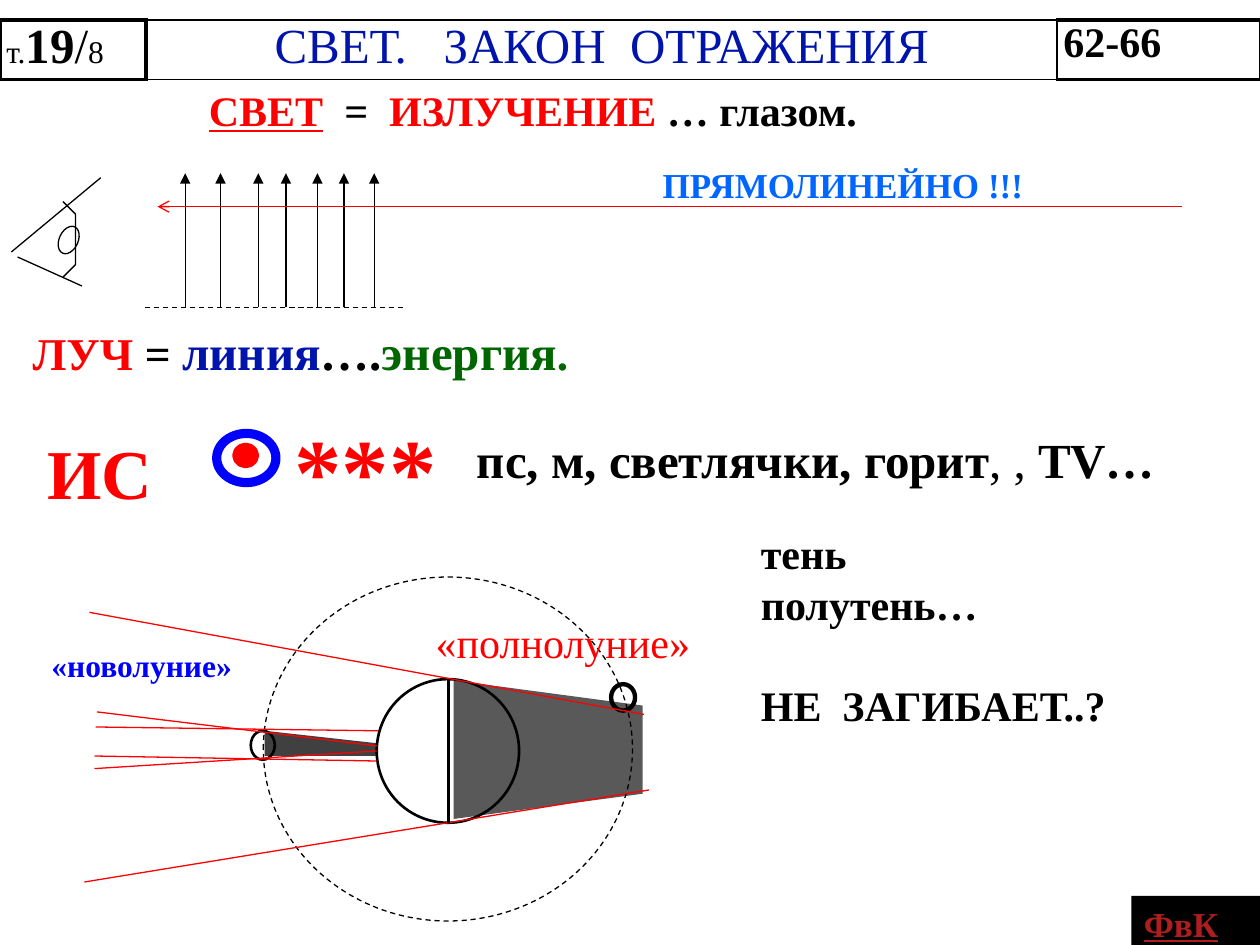
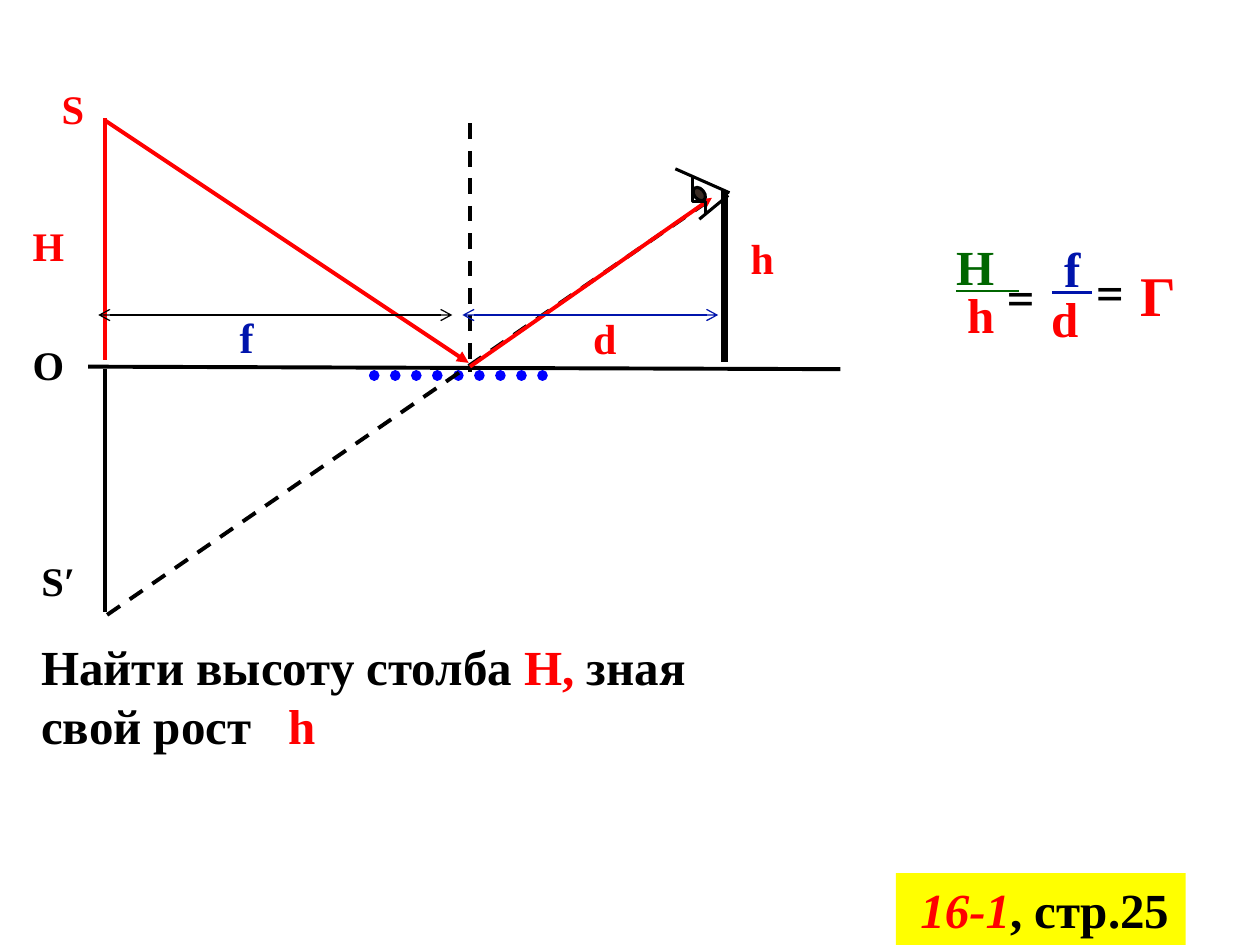
from dataclasses import dataclass
from typing import Optional

from lxml.etree import SubElement
from pptx import Presentation
from pptx.dml.color import RGBColor
from pptx.enum.dml import MSO_LINE
from pptx.enum.shapes import MSO_CONNECTOR, MSO_SHAPE
from pptx.enum.text import MSO_ANCHOR, MSO_AUTO_SIZE, PP_ALIGN
from pptx.oxml import parse_xml
from pptx.oxml.ns import nsdecls, qn
from pptx.util import Inches, Pt

# Slide grid: 100 columns by 75 rows of square units
WIDTH, HEIGHT = Inches(10), Inches(7.5)
UNIT = WIDTH / 100

BLACK = RGBColor(0x00, 0x00, 0x00)
RED = RGBColor(0xFF, 0x00, 0x00)
BLUE = RGBColor(0x00, 0x00, 0xFF)
NAVY = RGBColor(0x00, 0x14, 0xAC)
SKY = RGBColor(0x00, 0x66, 0xFF)
GREEN = RGBColor(0x00, 0x66, 0x00)
YELLOW = RGBColor(0xFF, 0xFF, 0x00)
BRICK = RGBColor(0xAD, 0x1F, 0x1F)
BROWN = RGBColor(0x3B, 0x2C, 0x24)
UMBRA = RGBColor(0x59, 0x59, 0x59)
MOON_SHADOW = RGBColor(0x40, 0x40, 0x40)
SERIF = "Times New Roman"

Point = tuple[float, float]
Box = tuple[float, float, float, float]


@dataclass(frozen=True)
class Run:
    text: str
    size: float
    color: RGBColor = BLACK
    bold: bool = True
    italic: bool = False
    underline: bool = False
    font: str = SERIF
    raised: bool = False


@dataclass(frozen=True)
class Stroke:
    color: RGBColor = BLACK
    width: float = 0.75
    dash: Optional[MSO_LINE] = None
    head: str = ""
    tail: str = ""
    round_cap: bool = False


@dataclass(frozen=True)
class Ray:
    start: Point
    end: Point
    stroke: Stroke = Stroke()


@dataclass(frozen=True)
class Oval:
    box: Box
    stroke: Stroke = Stroke()
    fill: Optional[RGBColor] = None
    turn: float = 0


@dataclass(frozen=True)
class Label:
    box: Box
    paragraphs: list[list[Run]]
    wrap: bool = True
    grow: bool = True
    fill: Optional[RGBColor] = None
    anchor: MSO_ANCHOR = MSO_ANCHOR.TOP
    last_gap: float = 0


@dataclass(frozen=True)
class Eye:
    cornea: tuple[Point, Point, Point, Point]
    lids: tuple[Ray, Ray]
    pupil: Oval


def grid(*units: float) -> list[int]:
    return [round(unit * UNIT) for unit in units]


def apply_stroke(line, stroke: Stroke) -> None:
    line.color.rgb = stroke.color
    line.width = Pt(stroke.width)
    if stroke.dash is not None:
        line.dash_style = stroke.dash


def apply_fill(fill, color: Optional[RGBColor]) -> None:
    if color is None:
        fill.background()
    else:
        fill.solid()
        fill.fore_color.rgb = color


def draw_ray(slide, ray: Ray) -> None:
    connector = slide.shapes.add_connector(MSO_CONNECTOR.STRAIGHT, *grid(*ray.start, *ray.end))
    apply_stroke(connector.line, ray.stroke)
    properties = connector._element.spPr
    outline = properties.find(qn("a:ln"))
    if ray.stroke.round_cap:
        outline.set("cap", "rnd")
    for tag, arrow in (("a:headEnd", ray.stroke.head), ("a:tailEnd", ray.stroke.tail)):
        if arrow:
            SubElement(outline, qn(tag)).set("type", arrow)
    SubElement(properties, qn("a:effectLst"))


def draw_oval(slide, oval: Oval) -> None:
    shape = slide.shapes.add_shape(MSO_SHAPE.OVAL, *grid(*oval.box))
    shape.shadow.inherit = False
    shape.rotation = oval.turn
    apply_fill(shape.fill, oval.fill)
    apply_stroke(shape.line, oval.stroke)


def draw_outline(slide, points: list[Point], fill: Optional[RGBColor] = None,
                 stroke: Optional[Stroke] = None) -> None:
    builder = slide.shapes.build_freeform(*points[0], scale=UNIT)
    builder.add_line_segments(points[1:], close=fill is not None)
    shape = builder.convert_to_shape()
    shape.shadow.inherit = False
    apply_fill(shape.fill, fill)
    if stroke:
        apply_stroke(shape.line, stroke)
    else:
        shape.line.fill.background()


def bezier(a: Point, b: Point, c: Point, d: Point, steps: int = 16) -> list[Point]:
    def at(t: float, axis: int) -> float:
        s = 1 - t
        return s**3 * a[axis] + 3 * s * s * t * b[axis] + 3 * s * t * t * c[axis] + t**3 * d[axis]
    return [(at(i / steps, 0), at(i / steps, 1)) for i in range(steps + 1)]


def draw_eye(slide, eye: Eye) -> None:
    draw_outline(slide, bezier(*eye.cornea), stroke=eye.pupil.stroke)
    for lid in eye.lids:
        draw_ray(slide, lid)
    draw_oval(slide, eye.pupil)


def write_runs(paragraph, runs: list[Run]) -> None:
    for item in runs:
        run = paragraph.add_run()
        run.text = item.text
        font = run.font
        font.name, font.size = item.font, Pt(item.size)
        font.bold, font.italic, font.underline = item.bold, item.italic, item.underline
        font.color.rgb = item.color
        if item.raised:
            run._r.get_or_add_rPr().set("baseline", "30000")


def draw_label(slide, label: Label) -> None:
    if label.fill is None:
        shape = slide.shapes.add_textbox(*grid(*label.box))
    else:
        shape = slide.shapes.add_shape(MSO_SHAPE.RECTANGLE, *grid(*label.box))
        shape.shadow.inherit = False
        shape.line.fill.background()
        apply_fill(shape.fill, label.fill)
    frame = shape.text_frame
    frame.word_wrap = label.wrap
    frame.auto_size = MSO_AUTO_SIZE.SHAPE_TO_FIT_TEXT if label.grow else MSO_AUTO_SIZE.NONE
    frame.vertical_anchor = label.anchor
    for index, runs in enumerate(label.paragraphs):
        paragraph = frame.add_paragraph() if index else frame.paragraphs[0]
        paragraph.alignment = PP_ALIGN.LEFT
        write_runs(paragraph, runs)
    if label.last_gap:
        paragraph.space_before = Pt(label.last_gap)


def draw_header(slide) -> None:
    thick, thin = 2.25, 1
    # Each cell: width, runs, alignment, borders left, right, top, bottom
    cells = [
        (11.6, [Run("т.", 18, bold=False), Run("19", 28), Run("/", 28, bold=False),
                Run("8", 18, bold=False)], PP_ALIGN.LEFT, (thick, thick, thick, thick)),
        (72.3, [Run("СВЕТ.   ЗАКОН  ОТРАЖЕНИЯ", 28, NAVY, bold=False)],
         PP_ALIGN.CENTER, (thick, thin, thin, thin)),
        (16.2, [Run("62-66", 24)], PP_ALIGN.LEFT, (thin, thick, thick, thick)),
    ]
    table = slide.shapes.add_table(1, len(cells), *grid(0, 1.6, 100, 4.7)).table
    table.first_row = table.horz_banding = False
    for index, (width, runs, alignment, borders) in enumerate(cells):
        table.columns[index].width = grid(width)[0]
        cell = table.cell(0, index)
        cell.margin_left = cell.margin_right = Inches(0.05)
        cell.margin_top = cell.margin_bottom = 0
        cell.fill.background()
        cell.text_frame.paragraphs[0].alignment = alignment
        write_runs(cell.text_frame.paragraphs[0], runs)
        properties = cell._tc.get_or_add_tcPr()
        for place, (side, points) in enumerate(zip("LRTB", borders)):
            properties.insert(place, parse_xml(
                f'<a:ln{side} {nsdecls("a")} w="{Pt(points)}"><a:solidFill>'
                f'<a:srgbClr val="{BLACK}"/></a:solidFill></a:ln{side}>'))


def build_light_slide(slide) -> None:
    hair, red = Stroke(), Stroke(RED)
    dashed = Stroke(dash=MSO_LINE.DASH)
    # Moon's shadow lies under everything
    draw_outline(slide, [(20.9, 59.9), (30, 59.7), (30, 59.2), (21, 58.1)], MOON_SHADOW)
    draw_header(slide)

    # Eye, upward rays and the straight ray
    draw_eye(slide, Eye(((5.4, 16.4), (6.5, 16.9), (6.4, 19.5), (5.1, 22.2)),
                        (Ray((1.4, 20.4), (6.5, 22.7)), Ray((0.9, 20), (8, 14.1))),
                        Oval((4.7, 17.9, 1.5, 2.3), hair, turn=24.8)))
    for column in (14.7, 17.5, 20.5, 22.7, 25.2, 27.3, 29.7):
        draw_ray(slide, Ray((column, 24.4), (column, 13.75), Stroke(tail="triangle")))
    draw_ray(slide, Ray((11.5, 24.4), (32, 24.4), dashed))
    draw_ray(slide, Ray((93.8, 16.4), (12.5, 16.4), Stroke(RED, tail="arrow")))

    # Light source sign
    draw_oval(slide, Oval((17.2, 34.4, 4.7, 3.9), Stroke(BLUE, 5.25)))
    draw_oval(slide, Oval((18.8, 35.5, 1.4, 1.3), Stroke(RED, 5.25), RED))

    # Earth, its shadow, the Moon and its orbit
    draw_outline(slide, [(35.7, 65.3), (50.8, 62.9), (50.8, 56.3), (35.7, 53.9)], UMBRA)
    for box, stroke in (((29.9, 53.9, 11.3, 11.4), Stroke(width=1.5)),
                        ((19.9, 58, 1.9, 2.3), Stroke(width=1.5)),
                        ((20.9, 45.8, 29.3, 27.3), dashed),
                        ((48.5, 54.3, 1.9, 2.1), Stroke(width=2.5))):
        draw_oval(slide, Oval(box, stroke))
    for start, end in (((7.1, 48.6), (51.1, 56.7)), ((6.7, 70), (51.5, 62.7)),
                       ((7.7, 56.5), (29.9, 59.2)), ((7.5, 61), (29.9, 59.6)),
                       ((7.5, 60), (29.9, 60.4)), ((7.6, 57.7), (30, 58))):
        draw_ray(slide, Ray(start, end, red))
    draw_ray(slide, Ray((35.6, 53.9), (35.6, 65.3), Stroke(width=1.5)))

    # Notes around the drawings
    for label in (
        Label((15.6, 6.2, 61.7, 5), [[Run("СВЕТ", 24, RED, underline=True), Run("  =  ", 24),
                                      Run("ИЗЛУЧЕНИЕ", 24, RED), Run(" … глазом.", 24)]]),
        Label((1.6, 25, 46.1, 5.7), [[Run("ЛУЧ", 26, RED), Run(" = ", 26), Run("линия", 28, NAVY),
                                      Run("….", 28), Run("энергия", 28, GREEN),
                                      Run(".", 26, GREEN)]]),
        Label((51.6, 12.5, 46.1, 4.4), [[Run("ПРЯМОЛИНЕЙНО !!!", 20, SKY)]]),
        Label((35.9, 33.6, 60.2, 5.7), [[Run(" пс, м, светлячки, горит", 28),
                                         Run(", , ", 28, bold=False), Run("TV…", 28)]]),
        Label((0, 33.6, 13.3, 7.7), [[Run("  ИС", 40, RED)]]),
        Label((22.4, 32.1, 14.1, 10.1), [[Run("***", 54, RED)]]),
        Label((59.4, 41.4, 37.5, 17.2), [[Run("тень", 24)], [Run("полутень…", 24)],
                                         [Run("НЕ  ЗАГИБАЕТ..?", 24)]], last_gap=28.8),
        Label((3.1, 50.8, 17.2, 4), [[Run("«новолуние»", 18, BLUE)]]),
        Label((33.6, 48.4, 22.7, 5), [[Run("«полнолуние»", 24, RED, bold=False)]]),
        Label((89.8, 71.1, 10.2, 3.9), [[Run("ФвК", 20, BRICK, underline=True)]],
              grow=False, fill=BLACK),
    ):
        draw_label(slide, label)


def build_mirror_slide(slide) -> None:
    red, black = Stroke(RED, 2.25), Stroke(width=2.25)
    red_arrow = Stroke(RED, 2.25, tail="triangle")
    dashed = Stroke(width=2.25, dash=MSO_LINE.DASH)
    lid = Stroke(width=1.75)

    # Pole, ground, mirror, rays and the mirrored pole
    for start, end, stroke in (
        ((8.3, 9.4), (8.3, 28.6), red),
        ((7, 29.1), (66.7, 29.3), black),
        ((29.7, 29.8), (44.5, 29.8), Stroke(BLUE, 6, MSO_LINE.ROUND_DOT, round_cap=True)),
        ((8.4, 9.6), (37.2, 28.8), red_arrow),
        ((37.3, 9.8), (37.3, 29.5), dashed),
        ((8.3, 29.3), (8.3, 48.6), black),
        ((8.5, 48.8), (56.3, 15.9), dashed),
        ((37.3, 29.1), (56.5, 15.7), red_arrow),
    ):
        draw_ray(slide, Ray(start, end, stroke))

    # Observer
    draw_eye(slide, Eye(((55.2, 14.1), (54.7, 14.5), (55.1, 15.8), (56, 17)),
                        (Ray((57.8, 15.5), (55.5, 17.4), lid), Ray((57.9, 15.3), (53.6, 13.4), lid)),
                        Oval((55.1, 14.8, 0.8, 1.2), lid, BROWN, 321.1)))
    draw_ray(slide, Ray((57.5, 15.2), (57.5, 28.7), Stroke(width=4.5)))

    # Distances
    for left, right, color in ((7.8, 35.9, BLACK), (36.7, 57, NAVY)):
        draw_ray(slide, Ray((left, 25), (right, 25), Stroke(color, head="arrow", tail="arrow")))

    # Point names
    for text, left, top, width, color in (("S", 3.9, 5.5, 4.1, RED), ("S′", 2.3, 43, 5, BLACK),
                                          ("H", 1.6, 16.4, 5.9, RED), ("О", 1.6, 25.8, 4.9, BLACK)):
        draw_label(slide, Label((left, top, width, 7.7), [[Run(text, 40, color, raised=True)]],
                                wrap=False))

    # Task, lengths, the ratio and the page reference
    equals = [[Run("=", 32, bold=False, font="Calibri")]]
    for label in (
        Label((58.6, 18, 3.9, 5), [[Run("h", 24, RED)]], wrap=False),
        Label((46.1, 24.3, 5.5, 5), [[Run("d", 24, RED)]]),
        Label((17.2, 24.2, 5.5, 5), [[Run(" f", 24, NAVY)]]),
        Label((2.3, 50, 59.4, 10.4), [[Run("Найти высоту столба ", 28), Run("H, ", 28, RED),
                                       Run("зная свой рост   ", 28), Run("h", 28, RED)]],
              anchor=MSO_ANCHOR.MIDDLE),
        Label((75.8, 22.1, 4.7, 5.5), [[Run("h", 28, RED)]], grow=False),
        Label((74.9, 18.3, 7, 5.7), [[Run("H  ", 28, GREEN, underline=True)]]),
        Label((78.9, 20.3, 6.4, 3.6), equals, grow=False),
        Label((82.5, 18.4, 5.5, 5.7), [[Run(" f ", 28, NAVY, underline=True)]]),
        Label((82.5, 22.4, 5.5, 5.7), [[Run("d", 28, RED)]]),
        Label((86, 19.9, 6.4, 3.6), equals, grow=False),
        Label((89.5, 20.2, 3.9, 6.4), [[Run("Г", 32, RED)]]),
        Label((71.1, 69.3, 23, 5.7), [[Run(" ", 28), Run("16-1", 28, RED, italic=True),
                                       Run(", стр.25", 28)]], wrap=False, fill=YELLOW),
    ):
        draw_label(slide, label)


def main() -> None:
    presentation = Presentation()
    presentation.slide_width, presentation.slide_height = WIDTH, HEIGHT
    for build in (build_light_slide, build_mirror_slide):
        build(presentation.slides.add_slide(presentation.slide_layouts[6]))
    presentation.save("out.pptx")


if __name__ == "__main__":
    main()
